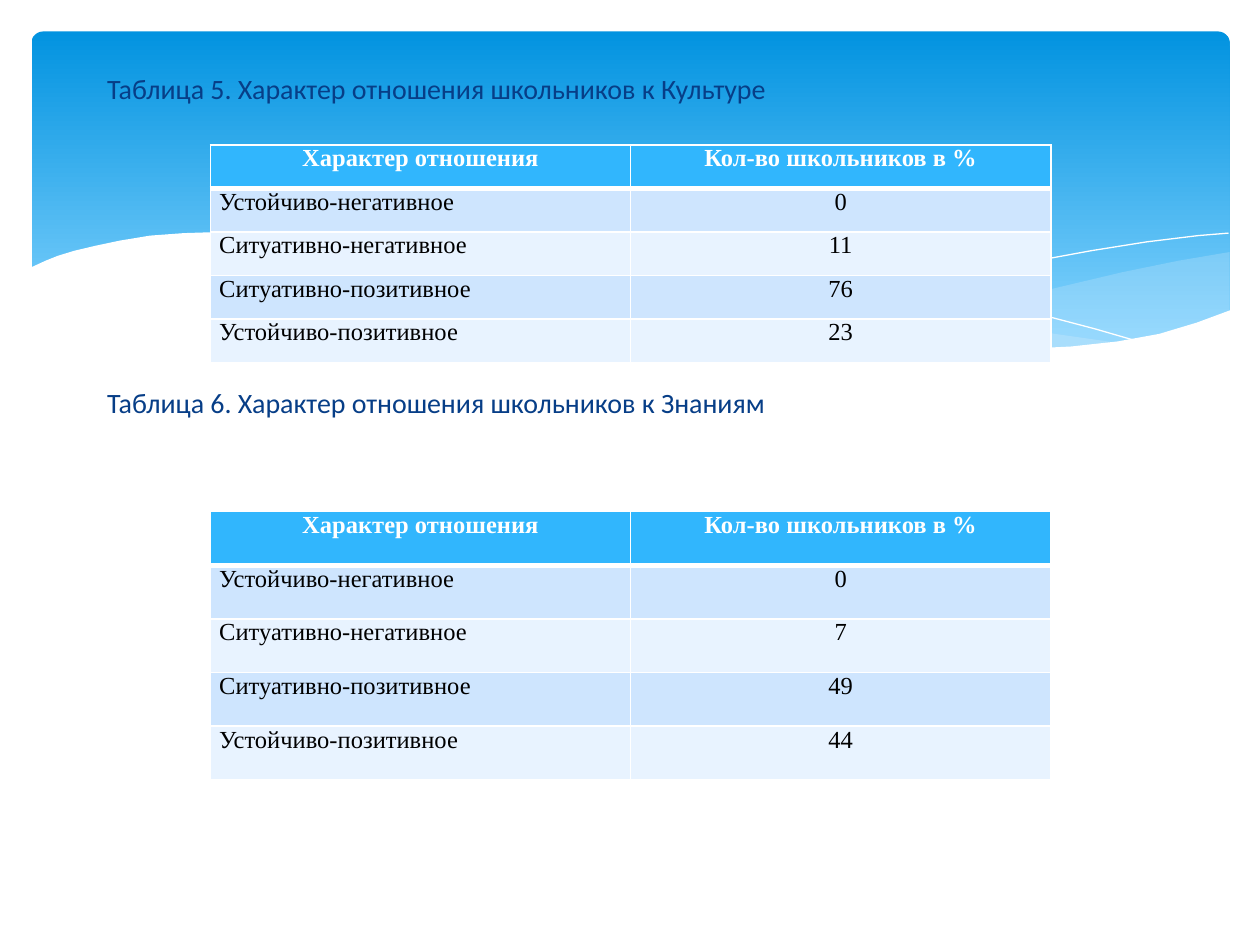
from lxml import etree
from pptx import Presentation
from pptx.dml.color import RGBColor
from pptx.enum.shapes import MSO_SHAPE
from pptx.enum.text import MSO_ANCHOR, PP_ALIGN
from pptx.oxml.ns import qn
from pptx.util import Inches, Pt

ROUND = MSO_SHAPE.ROUNDED_RECTANGLE
TOP = MSO_ANCHOR.TOP
LEFT, CENTER = PP_ALIGN.LEFT, PP_ALIGN.CENTER

WHITE = RGBColor(0xFF, 0xFF, 0xFF)
BLACK = RGBColor(0, 0, 0)
NAVY = RGBColor(0x07, 0x3E, 0x87)
DEEP = RGBColor(0x02, 0x93, 0xE0)
SKY = RGBColor(0x83, 0xD3, 0xFE)
MIST = RGBColor(0xC6, 0xE7, 0xFC)
HEAD = RGBColor(0x31, 0xB6, 0xFD)
BANDS = RGBColor(0xCE, 0xE5, 0xFE), RGBColor(0xE8, 0xF3, 0xFF)

UNIT = Inches(0.01)  # wave points are in hundredths of an inch

# Filled waves: opacity in percent, points
WAVES = [
    (29, [(976, 200), (935, 207), (891, 216), (832, 230), (779, 242), (729, 253),
          (661, 265), (691, 269), (732, 274), (769, 277), (803, 278), (844, 277),
          (881, 273), (913, 267), (942, 259), (963, 252), (976, 247)]),
    (40, [(893, 273), (837, 265), (775, 254), (706, 240), (629, 222), (584, 211),
          (541, 203), (502, 196), (465, 191), (420, 187), (380, 185), (344, 186),
          (313, 188), (286, 191), (323, 196), (362, 203), (404, 211), (449, 222),
          (530, 240), (601, 255), (650, 264), (695, 270), (736, 275), (773, 277),
          (807, 278), (848, 277), (876, 275)]),
]
# Thin white curves
CURVES = [
    [(309, 195), (328, 192), (363, 189), (401, 187), (450, 188), (489, 190),
     (533, 194), (582, 200), (636, 208), (695, 219), (760, 233), (831, 251),
     (869, 261), (907, 272)],
    [(613, 257), (653, 246), (695, 235), (748, 223), (806, 210), (866, 199),
     (910, 192), (951, 187), (975, 185)],
]
# White area below the blue panel
SHORE = [(977, 246), (950, 256), (920, 265), (887, 271), (850, 275), (809, 277),
         (761, 275), (708, 270), (648, 262), (579, 250), (503, 233), (447, 220),
         (391, 207), (340, 197), (292, 190), (250, 186), (211, 184), (177, 184),
         (146, 185), (119, 187), (95, 191), (76, 195), (59, 199), (46, 203),
         (36, 207), (23, 213), (23, 329), (977, 329)]

NAMES = ["Устойчиво-негативное", "Ситуативно-негативное",
         "Ситуативно-позитивное", "Устойчиво-позитивное"]
TITLES = "Характер отношения", "Кол-во школьников в %"


def style(font, **values):
    for name, value in values.items():
        if name == "color":
            font.color.rgb = value
        else:
            setattr(font, name, value)


def trace(slide, left, top, points, close):
    pen = slide.shapes.build_freeform(*points[0], scale=UNIT)
    pen.add_line_segments(points[1:], close=close)
    shape = pen.convert_to_shape(left, top)
    shape.shadow.inherit = False
    return shape


def paint(shape, color, alpha=100):
    shape.fill.solid()
    shape.fill.fore_color.rgb = color
    shape.line.fill.background()
    if alpha < 100:
        tint = next(shape.element.spPr.iter(qn("a:srgbClr")))
        etree.SubElement(tint, qn("a:alpha"), val=str(alpha * 1000))


def add_waves(slide, left, top):
    # Blue panel
    panel = slide.shapes.add_shape(ROUND, left + Inches(0.25), top + Inches(0.25),
                                   Inches(9.51), Inches(2.7))
    panel.shadow.inherit = False
    panel.adjustments[0] = 0.034
    panel.line.fill.background()
    panel.fill.gradient()
    panel.fill.gradient_angle = 270
    for stop, spot, color in zip(panel.fill.gradient_stops, (0, 0.9), (DEEP, SKY)):
        stop.position = spot
        stop.color.rgb = color
    # Waves, curves and white shore
    for alpha, points in WAVES:
        paint(trace(slide, left, top, points, True), MIST, alpha)
    for points in CURVES:
        curve = trace(slide, left, top, points, False)
        curve.fill.background()
        curve.line.color.rgb = WHITE
        curve.line.width = Pt(0)
    paint(trace(slide, left, top, SHORE, True), WHITE)


def add_heads(slide, left, top, width, height):
    body = slide.placeholders[1]
    body.left, body.top, body.width, body.height = left, top, width, height
    body.element.getparent().append(body.element)  # in front of the waves
    frame = body.text_frame
    frame.vertical_anchor = TOP
    frame.text = ("Таблица 5. Характер отношения школьников к Культуре\n"
                  "Таблица 6. Характер отношения школьников к Знаниям")
    for para, gap in zip(frame.paragraphs, (3.2, 160)):
        para.space_before = Pt(gap)
        para.alignment = LEFT
        style(para.runs[0].font, name="Calibri", size=Pt(16), color=NAVY)
        props = para._p.get_or_add_pPr()
        props.set("marL", "0")
        props.set("indent", "0")
        etree.SubElement(props, qn("a:buNone"))


def edge(cell, **widths):
    props = cell._tc.get_or_add_tcPr()
    for side in "LRTB":
        line = etree.SubElement(props, qn("a:ln" + side),
                                w=str(Pt(widths.get(side, 1))))
        fill = etree.SubElement(line, qn("a:solidFill"))
        etree.SubElement(fill, qn("a:srgbClr"), val=str(WHITE))


def add_grid(slide, left, top, width, height, counts):
    rows = [TITLES, *zip(NAMES, counts)]
    table = slide.shapes.add_table(len(rows), 2, left, top, width, height).table
    for r, row in enumerate(rows):
        for c, text in enumerate(row):
            cell = table.cell(r, c)
            edge(cell, **{0: {"B": 3}, 1: {"T": 3}}.get(r, {}))
            cell.fill.solid()
            cell.fill.fore_color.rgb = BANDS[(r - 1) % 2] if r else HEAD
            cell.margin_left = cell.margin_right = Inches(0.07)
            cell.margin_top = cell.margin_bottom = 0
            cell.text = str(text)
            para = cell.text_frame.paragraphs[0]
            para.alignment = LEFT if r and not c else CENTER
            style(para.runs[0].font, name="Times New Roman", size=Pt(14),
                  bold=r == 0, color=BLACK if r else WHITE)


def main():
    deck = Presentation()
    deck.slide_width, deck.slide_height = Inches(10), Inches(7.5)
    slide = deck.slides.add_slide(deck.slide_layouts[1])
    title = slide.shapes.title.element
    title.getparent().remove(title)
    add_waves(slide, 0, 0)
    add_heads(slide, Inches(0.75), Inches(0.52), Inches(8.17), Inches(6.56))
    for top, height, counts in ((1.15, 1.73, (0, 11, 76, 23)),
                                (4.06, 2.13, (0, 7, 49, 44))):
        add_grid(slide, Inches(1.67), Inches(top), Inches(6.67), Inches(height), counts)
    deck.save("out.pptx")


if __name__ == "__main__":
    main()
